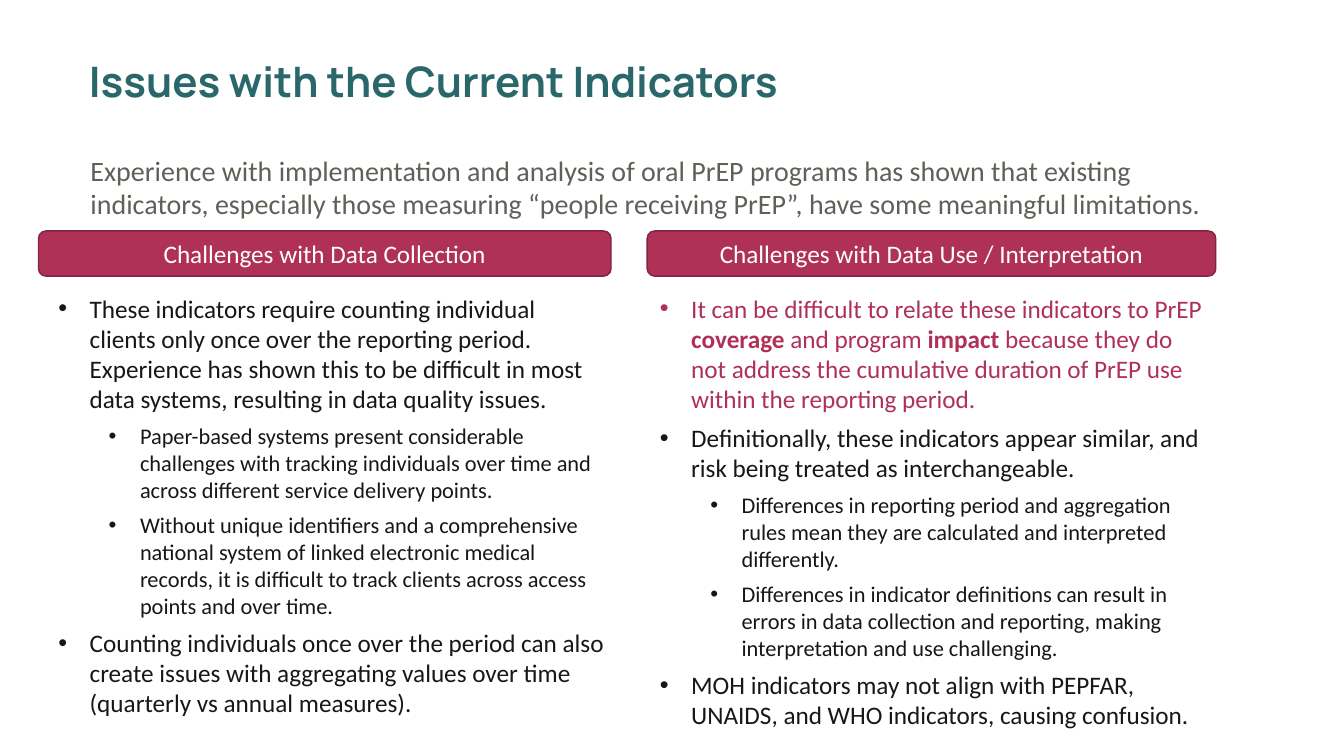
from dataclasses import dataclass

from lxml.etree import SubElement
from pptx import Presentation
from pptx.dml.color import RGBColor
from pptx.enum.shapes import MSO_SHAPE
from pptx.enum.text import MSO_ANCHOR, PP_ALIGN
from pptx.oxml.ns import qn
from pptx.util import Cm, Pt


@dataclass(frozen=True)
class Theme:
    heading_font: str = "Manrope"
    body_font: str = "Calibri"
    teal: str = "29676B"
    grey: str = "625E58"
    ink: str = "181717"
    berry: str = "AF3158"
    berry_dark: str = "812441"
    white: str = "FFFFFF"
    title_size: int = 30
    intro_size: int = 20
    header_size: int = 18
    bullet_sizes: tuple = (18, 16)
    bullet_indents: tuple = (0.79, 2.06)
    bullet_hang: float = 0.79
    bullet_gap: int = 6


class SlideBuilder:
    def __init__(self, presentation, theme):
        self.theme = theme
        self.slide = presentation.slides.add_slide(presentation.slide_layouts[5])

    def style(self, paragraph, size, color, font=None):
        for run in paragraph.runs:
            run.font.name = font or self.theme.body_font
            run.font.size = Pt(size)
            run.font.color.rgb = RGBColor.from_string(color)

    def title(self, text, left, top, width, height):
        shape = self.slide.shapes.title
        shape.left, shape.top, shape.width, shape.height = map(Cm, (left, top, width, height))
        frame = shape.text_frame
        frame.text = text
        frame.word_wrap = True
        frame.vertical_anchor = MSO_ANCHOR.MIDDLE
        frame.margin_left = Cm(2.24)
        paragraph = frame.paragraphs[0]
        paragraph.alignment = PP_ALIGN.LEFT
        paragraph.line_spacing = 0.9
        self.style(paragraph, self.theme.title_size, self.theme.teal, self.theme.heading_font)
        paragraph.runs[0].font.bold = True

    def text_box(self, left, top, width, height):
        frame = self.slide.shapes.add_textbox(*map(Cm, (left, top, width, height))).text_frame
        frame.word_wrap = True
        return frame

    def intro(self, text, left, top, width, height):
        frame = self.text_box(left, top, width, height)
        frame.vertical_anchor = MSO_ANCHOR.MIDDLE
        frame.text = text
        self.style(frame.paragraphs[0], self.theme.intro_size, self.theme.grey)

    def header(self, text, left, top, width, height):
        shape = self.slide.shapes.add_shape(
            MSO_SHAPE.ROUNDED_RECTANGLE, *map(Cm, (left, top, width, height)))
        shape.shadow.inherit = False
        shape.fill.solid()
        shape.fill.fore_color.rgb = RGBColor.from_string(self.theme.berry)
        shape.line.color.rgb = RGBColor.from_string(self.theme.berry_dark)
        shape.line.width = Pt(1)
        shape.text_frame.text = text
        paragraph = shape.text_frame.paragraphs[0]
        paragraph.alignment = PP_ALIGN.CENTER
        self.style(paragraph, self.theme.header_size, self.theme.white)

    def bullets(self, items, left, top, width, height):
        """Each item is (level, colour, text); text between ** marks is bold."""
        frame = self.text_box(left, top, width, height)
        for index, (level, color, text) in enumerate(items):
            paragraph = frame.add_paragraph() if index else frame.paragraphs[0]
            paragraph.level = level
            properties = paragraph._p.get_or_add_pPr()
            properties.set("marL", str(Cm(self.theme.bullet_indents[level])))
            properties.set("indent", str(-Cm(self.theme.bullet_hang)))
            SubElement(properties, qn("a:buFont")).set("typeface", "Arial")
            SubElement(properties, qn("a:buChar")).set("char", "•")
            if index:
                paragraph.space_before = Pt(self.theme.bullet_gap)
            for part, words in enumerate(text.split("**")):
                run = paragraph.add_run()
                run.text = words
                run.font.bold = part % 2 == 1
            self.style(paragraph, self.theme.bullet_sizes[level], color)


def main():
    presentation = Presentation()
    presentation.slide_width, presentation.slide_height = Cm(33.87), Cm(19.05)
    theme = Theme()
    builder = SlideBuilder(presentation, theme)

    # Title and introduction
    builder.title("Issues with the Current Indicators", 0, 0.53, 29.21, 3.18)
    builder.intro(
        "Experience with implementation and analysis of oral PrEP programs has shown that "
        "existing indicators, especially those measuring “people receiving PrEP”, have some "
        "meaningful limitations.", 2.03, 3.73, 29.21, 1.96)

    # Column content
    collection = [
        (0, theme.ink, "These indicators require counting individual clients only once over the "
         "reporting period. Experience has shown this to be difficult in most data systems, "
         "resulting in data quality issues."),
        (1, theme.ink, "Paper-based systems present considerable challenges with tracking "
         "individuals over time and across different service delivery points."),
        (1, theme.ink, "Without unique identifiers and a comprehensive national system of linked "
         "electronic medical records, it is difficult to track clients across access points "
         "and over time."),
        (0, theme.ink, "Counting individuals once over the period can also create issues with "
         "aggregating values over time (quarterly vs annual measures)."),
    ]
    interpretation = [
        (0, theme.berry, "It can be difficult to relate these indicators to PrEP **coverage** and "
         "program **impact** because they do not address the cumulative duration of PrEP use "
         "within the reporting period."),
        (0, theme.ink, "Definitionally, these indicators appear similar, and risk being treated "
         "as interchangeable."),
        (1, theme.ink, "Differences in reporting period and aggregation rules mean they are "
         "calculated and interpreted differently."),
        (1, theme.ink, "Differences in indicator definitions can result in errors in data "
         "collection and reporting, making interpretation and use challenging."),
        (0, theme.ink, "MOH indicators may not align with PEPFAR, UNAIDS, and WHO indicators, "
         "causing confusion."),
    ]

    # Two columns: header bar above a bullet list
    columns = [
        ("Challenges with Data Collection", 0.97, 14.43, collection, 1.22),
        ("Challenges with Data Use / Interpretation", 16.31, 14.33, interpretation, 16.38),
    ]
    for heading, header_left, header_width, items, list_left in columns:
        builder.header(heading, header_left, 5.82, header_width, 1.14)
        builder.bullets(items, list_left, 7.26, 14.33, 11.5)

    presentation.save("out.pptx")


if __name__ == "__main__":
    main()
